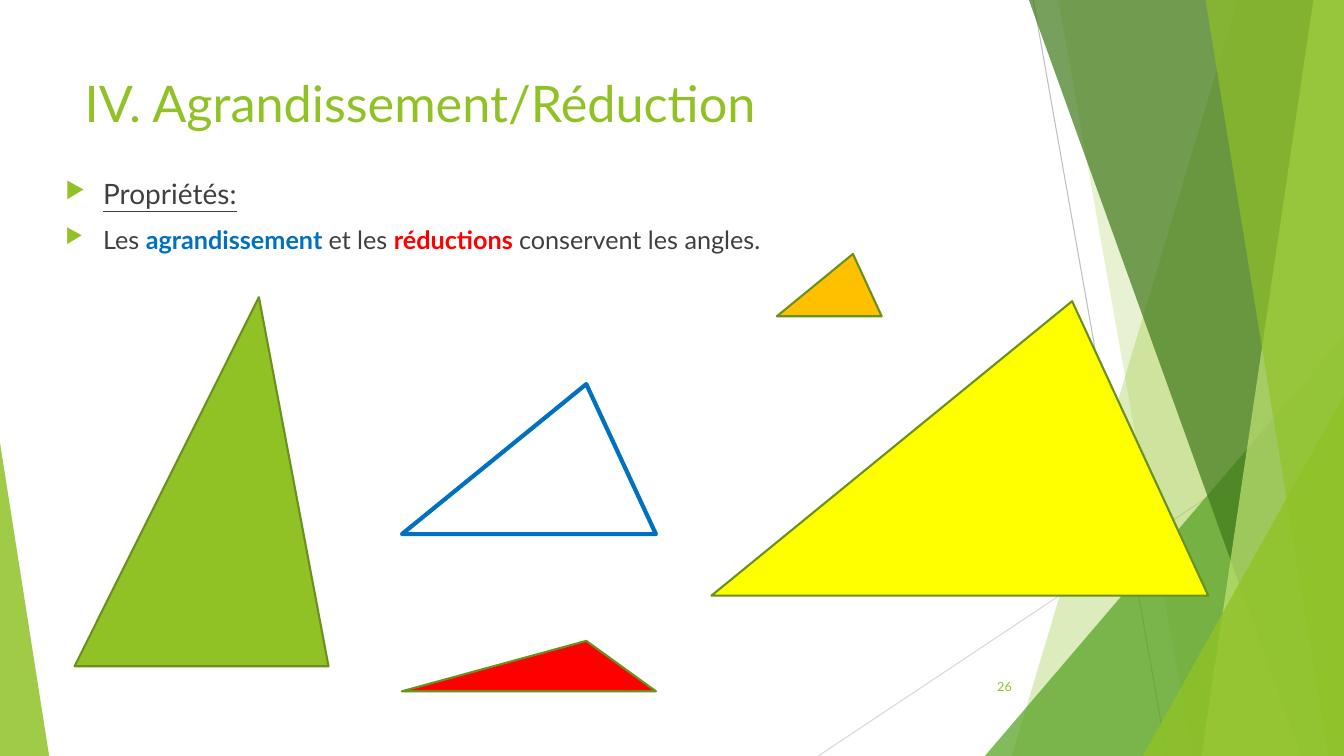
"""Build the slide on enlargement and reduction of triangles."""
from dataclasses import dataclass
from typing import Optional

from lxml import etree
from pptx import Presentation
from pptx.dml.color import RGBColor
from pptx.enum.shapes import MSO_CONNECTOR, MSO_SHAPE
from pptx.enum.text import MSO_ANCHOR, MSO_AUTO_SIZE, PP_ALIGN
from pptx.oxml.ns import qn
from pptx.shapes.autoshape import Shape
from pptx.slide import Slide
from pptx.text.text import TextFrame
from pptx.util import Cm, Pt

STRAIGHT = MSO_CONNECTOR.STRAIGHT
TRIANGLE = MSO_SHAPE.ISOSCELES_TRIANGLE
TOP, MIDDLE = MSO_ANCHOR.TOP, MSO_ANCHOR.MIDDLE
LEFT, RIGHT = PP_ALIGN.LEFT, PP_ALIGN.RIGHT
NO_AUTOFIT = MSO_AUTO_SIZE.NONE

WIDTH, HEIGHT = 33.87, 19.05
FONT = "Lato"
APEX = 0.726

GREEN = RGBColor(0x90, 0xC2, 0x26)
MID_GREEN = RGBColor(0x54, 0xA0, 0x21)
DARK_GREEN = RGBColor(0x3F, 0x78, 0x19)
PALE_GREEN = RGBColor(0xC0, 0xE4, 0x74)
OUTLINE_GREEN = RGBColor(0x6B, 0x90, 0x1C)
WHITE = RGBColor(0xFF, 0xFF, 0xFF)
YELLOW = RGBColor(0xFF, 0xFF, 0x00)
ORANGE = RGBColor(0xFF, 0xC0, 0x00)
RED = RGBColor(0xFF, 0x00, 0x00)
BLUE = RGBColor(0x00, 0x70, 0xC0)
TEXT_GREY = RGBColor(0x40, 0x40, 0x40)
GREY = RGBColor(0xBF, 0xBF, 0xBF)
LIGHT_GREY = RGBColor(0xD9, 0xD9, 0xD9)


@dataclass(frozen=True)
class Ray:
    """A thin background line."""
    start: tuple[float, float]
    end: tuple[float, float]
    color: RGBColor


@dataclass(frozen=True)
class Facet:
    """A full-height band from a slanted edge to the right side."""
    top_x: float
    bottom_x: float
    color: RGBColor
    opacity: int


@dataclass(frozen=True)
class Triangle:
    """A triangle whose apex is a share of its width."""
    box: tuple[float, float, float, float]
    color: RGBColor
    apex: float = APEX
    opacity: int = 100
    outline: Optional[RGBColor] = OUTLINE_GREEN
    outline_width: float = 1.5


@dataclass(frozen=True)
class Words:
    """A run of text and its format."""
    text: str
    size: int
    color: RGBColor = TEXT_GREY
    bold: bool = False
    underline: bool = False


RAYS = [
    Ray((26.04, 0), (29.41, HEIGHT), GREY),
    Ray((WIDTH, 10.24), (20.62, HEIGHT), LIGHT_GREY),
]
DECORATION = [
    Facet(31.19, 25.5, GREEN, 30),
    Facet(26.67, 30.05, GREEN, 20),
    Triangle((24.82, 8.46, 9.05, 10.59), MID_GREEN, 1, 72, None),
    Facet(25.93, 32.79, DARK_GREEN, 70),
    Facet(33.1, 30.28, PALE_GREEN, 70),
    Facet(30.38, 33.48, GREEN, 65),
    Triangle((28.8, 9.98, 5.07, 9.07), GREEN, 1, 80, None),
    Triangle((0, 11.15, 1.24, 7.9), GREEN, 0, 85, None),
]
FIGURES = [
    Triangle((10.13, 9.68, 6.4, 3.78), WHITE, outline=BLUE, outline_width=3),
    Triangle((19.58, 6.4, 2.64, 1.57), ORANGE),
    Triangle((17.93, 7.59, 12.52, 7.42), YELLOW),
    Triangle((1.88, 7.49, 6.4, 9.3), GREEN),
    Triangle((10.13, 16.15, 6.4, 1.27), RED),
]
TITLE = [[Words("IV. Agrandissement/Réduction", 36, GREEN)]]
PROPERTIES = [
    [Words("Propriétés:", 20, underline=True)],
    [
        Words("Les ", 18),
        Words("agrandissement ", 18, BLUE, bold=True),
        Words("et les ", 18),
        Words("réductions ", 18, RED, bold=True),
        Words("conservent les angles.", 18),
    ],
]
PAGE_NUMBER = [[Words("26", 9, GREEN)]]


def paint(shape: Shape, color: RGBColor, opacity: int) -> None:
    """Fill a shape without shadow."""
    shape.shadow.inherit = False
    shape.fill.solid()
    shape.fill.fore_color.rgb = color
    if opacity < 100:
        fill_color = shape.element.spPr.find(qn("a:solidFill")).find(qn("a:srgbClr"))
        etree.SubElement(fill_color, qn("a:alpha"), val=str(opacity * 1000))


def draw_ray(slide: Slide, ray: Ray) -> None:
    """Draw a thin line."""
    connector = slide.shapes.add_connector(
        STRAIGHT, *(Cm(value) for value in ray.start + ray.end))
    connector.line.color.rgb = ray.color
    connector.line.width = Pt(0.75)
    etree.SubElement(connector.element.spPr, qn("a:effectLst"))


def draw_facet(slide: Slide, facet: Facet) -> None:
    """Draw a translucent band."""
    builder = slide.shapes.build_freeform(Cm(facet.top_x), 0)
    builder.add_line_segments([
        (Cm(WIDTH), 0),
        (Cm(WIDTH), Cm(HEIGHT)),
        (Cm(facet.bottom_x), Cm(HEIGHT)),
    ], close=True)
    shape = builder.convert_to_shape()
    paint(shape, facet.color, facet.opacity)
    shape.line.fill.background()


def draw_triangle(slide: Slide, triangle: Triangle) -> None:
    """Draw a triangle, outlined if it has an outline colour."""
    shape = slide.shapes.add_shape(TRIANGLE, *(Cm(value) for value in triangle.box))
    shape.adjustments[0] = triangle.apex
    paint(shape, triangle.color, triangle.opacity)
    if triangle.outline is None:
        shape.line.fill.background()
    else:
        shape.line.color.rgb = triangle.outline
        shape.line.width = Pt(triangle.outline_width)


def write(frame: TextFrame, lines: list[list[Words]], anchor: MSO_ANCHOR = TOP,
          alignment: PP_ALIGN = LEFT, bulleted: bool = False) -> None:
    """Write paragraphs run by run."""
    frame.word_wrap = True
    frame.auto_size = NO_AUTOFIT
    frame.vertical_anchor = anchor
    for index, line in enumerate(lines):
        paragraph = frame.add_paragraph() if index else frame.paragraphs[0]
        paragraph.alignment = alignment
        if bulleted:
            paragraph.space_before = Pt(10)
            properties = paragraph._p.get_or_add_pPr()
            properties.set("marL", str(Cm(0.95)))
            properties.set("indent", str(-Cm(0.95)))
            bullet_color = etree.SubElement(properties, qn("a:buClr"))
            etree.SubElement(bullet_color, qn("a:srgbClr"), val=str(GREEN))
            etree.SubElement(properties, qn("a:buSzPct"), val="80000")
            etree.SubElement(properties, qn("a:buChar"), char="▶")
        for words in line:
            run = paragraph.add_run()
            run.text = words.text
            run.font.name = FONT
            run.font.size = Pt(words.size)
            run.font.color.rgb = words.color
            run.font.bold = words.bold
            run.font.underline = words.underline


def main() -> None:
    """Assemble and save the slide."""
    presentation = Presentation()
    presentation.slide_width, presentation.slide_height = Cm(WIDTH), Cm(HEIGHT)
    slide = presentation.slides.add_slide(presentation.slide_layouts[5])
    for ray in RAYS:
        draw_ray(slide, ray)
    for piece in DECORATION:
        if isinstance(piece, Facet):
            draw_facet(slide, piece)
        else:
            draw_triangle(slide, piece)
    title = slide.shapes.title
    title.left, title.top, title.width, title.height = Cm(1.88), Cm(1.7), Cm(23.88), Cm(3.66)
    write(title.text_frame, TITLE)
    body = slide.shapes.add_textbox(Cm(1.4), Cm(4.32), Cm(23.88), Cm(13.46))
    write(body.text_frame, PROPERTIES, bulleted=True)
    number = slide.shapes.add_textbox(Cm(23.85), Cm(16.79), Cm(1.9), Cm(1.02))
    write(number.text_frame, PAGE_NUMBER, MIDDLE, RIGHT)
    for figure in FIGURES:
        draw_triangle(slide, figure)
    presentation.save("out.pptx")


if __name__ == "__main__":
    main()
